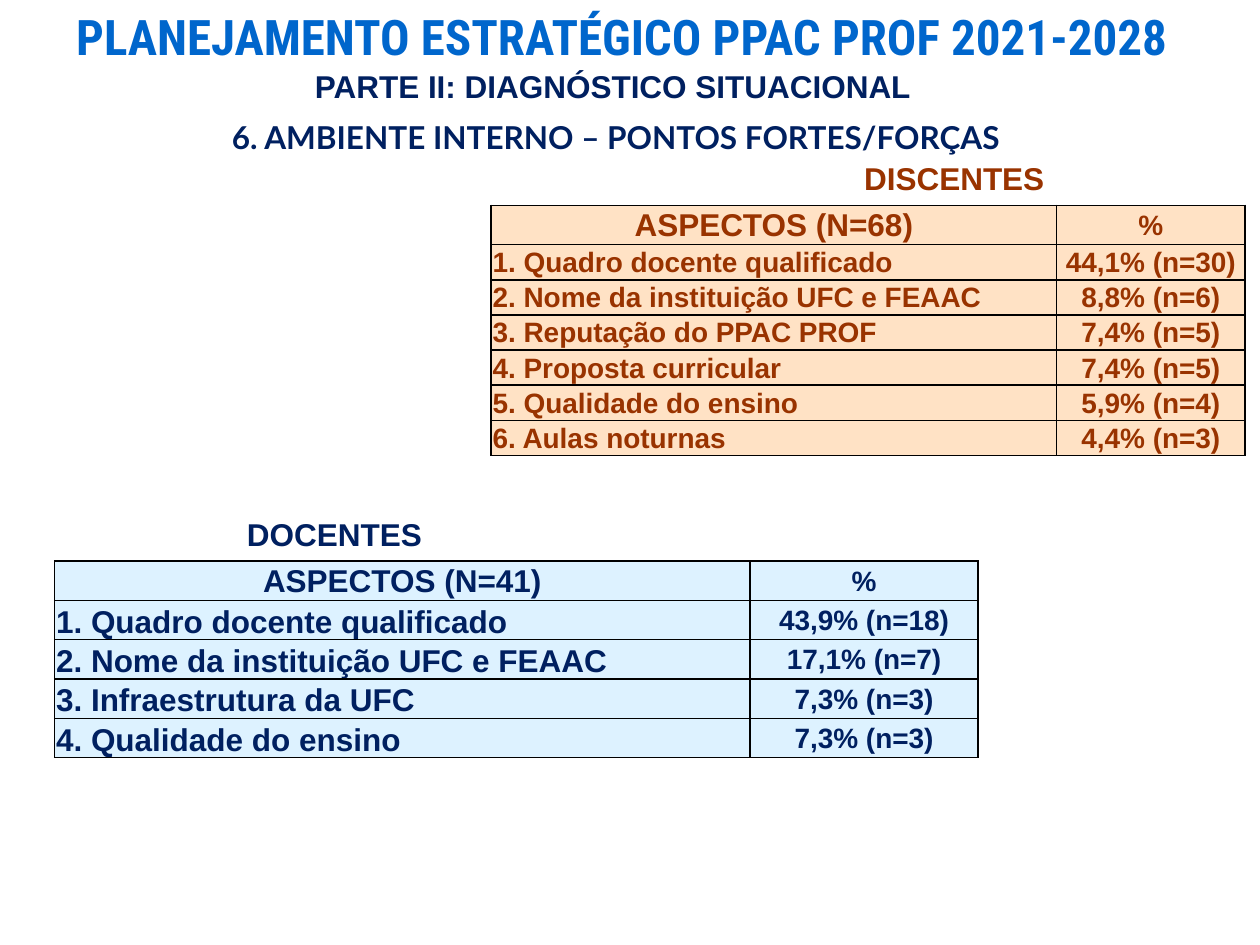
from lxml import etree
from pptx import Presentation
from pptx.dml.color import RGBColor
from pptx.enum.text import MSO_ANCHOR as ANCHOR, MSO_AUTO_SIZE as AUTO, PP_ALIGN as ALIGN
from pptx.oxml.ns import qn
from pptx.util import Cm, Pt

COLORS = {
    "title": "0066CC", "glow": "99CCFF", "navy": "002060", "brown": "993300",
    "peach": "FFE2C5", "sky": "DDF2FF", "border": "000000",
}

STUDENTS = [
    ("ASPECTOS (N=68)", "%"),
    ("1. Quadro docente qualificado", "44,1% (n=30)"),
    ("2. Nome da instituição UFC e FEAAC", "8,8% (n=6)"),
    ("3. Reputação do PPAC PROF", "7,4% (n=5)"),
    ("4. Proposta curricular", "7,4% (n=5)"),
    ("5. Qualidade do ensino", "5,9% (n=4)"),
    ("6. Aulas noturnas", "4,4% (n=3)"),
]
TEACHERS = [
    ("ASPECTOS (N=41)", "%"),
    ("1. Quadro docente qualificado", "43,9% (n=18)"),
    ("2. Nome da instituição UFC e FEAAC", "17,1% (n=7)"),
    ("3. Infraestrutura da UFC", "7,3% (n=3)"),
    ("4. Qualidade do ensino", "7,3% (n=3)"),
]


def rgb(name):
    return RGBColor.from_string(COLORS[name])


def write(tf, text, color, size=18, font="Arial", align=ALIGN.LEFT):
    """Fill a text frame with one bold paragraph and return its run."""
    tf.text = text
    p = tf.paragraphs[0]
    p.alignment = align
    r = p.runs[0]
    r.font.name, r.font.size, r.font.bold = font, Pt(size), True
    r.font.color.rgb = rgb(color)
    return r


def add_line(parent, tag, index, width, color):
    """Insert a solid line element (text outline or cell border)."""
    ln = etree.Element(qn(tag), w=str(Pt(width)))
    fill = etree.SubElement(ln, qn("a:solidFill"))
    etree.SubElement(fill, qn("a:srgbClr"), val=COLORS[color])
    parent.insert(index, ln)


def add_title(s, x, y, w, h):
    sp = s.shapes.title
    sp.left, sp.top, sp.width, sp.height = Cm(x), Cm(y), Cm(w), Cm(h)
    tf = sp.text_frame
    tf.word_wrap, tf.auto_size = False, AUTO.NONE
    tf.vertical_anchor = ANCHOR.TOP
    r = write(tf, "PLANEJAMENTO ESTRATÉGICO PPAC PROF 2021-2028",
              "title", 28, "Roboto Condensed", ALIGN.CENTER)
    add_line(r.font._element, "a:ln", 0, 1.5, "glow")


def add_label(s, text, color, x, y, w, wrap=False, **style):
    tf = s.shapes.add_textbox(Cm(x), Cm(y), Cm(w), Cm(1.02)).text_frame
    tf.word_wrap, tf.auto_size = wrap, AUTO.SHAPE_TO_FIT_TEXT
    write(tf, text, color, **style)


def format_cell(cell, text, color, fill, size, align, anchor):
    cell.margin_left = cell.margin_right = cell.margin_top = Cm(0.03)
    cell.margin_bottom = 0
    cell.vertical_anchor = anchor
    cell.fill.solid()
    cell.fill.fore_color.rgb = rgb(fill)
    write(cell.text_frame, text, color, size, align=align)
    for i, side in enumerate("LRTB"):
        add_line(cell._tc.get_or_add_tcPr(), f"a:ln{side}", i, 1, "border")


def add_panel(s, x, y, heading, heading_dx, rows, widths, row_h,
              color, fill, size, anchor):
    """Heading with its table; size and anchor apply to the aspect names."""
    add_label(s, heading, color, x + heading_dx, y, 4.2)
    head_h = 0.79
    height = head_h + row_h * (len(rows) - 1)
    table = s.shapes.add_table(len(rows), 2, Cm(x), Cm(y + 1.05),
                               Cm(sum(widths)), Cm(height)).table
    for col, w in zip(table.columns, widths):
        col.width = Cm(w)
    for i, (aspect, share) in enumerate(rows):
        head = i == 0
        table.rows[i].height = Cm(head_h if head else row_h)
        format_cell(table.cell(i, 0), aspect, color, fill, 18 if head else size,
                    ALIGN.CENTER if head else ALIGN.LEFT,
                    ANCHOR.MIDDLE if head else anchor)
        format_cell(table.cell(i, 1), share, color, fill, 16,
                    ALIGN.CENTER, ANCHOR.MIDDLE)


def main():
    prs = Presentation()
    prs.slide_width, prs.slide_height = Cm(25.4), Cm(19.05)
    s = prs.slides.add_slide(prs.slide_layouts[5])
    add_title(s, 0.78, 0, 23.5, 1.19)
    add_label(s, "PARTE II: DIAGNÓSTICO SITUACIONAL", "navy", 6.1, 1.22, 12.65)
    add_label(s, "6. AMBIENTE INTERNO – PONTOS FORTES/FORÇAS", "navy",
              4.12, 2.26, 16.59, wrap=True, font="Lato", align=ALIGN.CENTER)
    add_panel(s, 9.9, 3.09, "DISCENTES", 7.27, STUDENTS, (11.4, 3.8), 0.7,
              "brown", "peach", 16, ANCHOR.MIDDLE)
    add_panel(s, 1.1, 10.26, "DOCENTES", 3.63, TEACHERS, (14.02, 4.6), 0.79,
              "navy", "sky", 18, ANCHOR.BOTTOM)
    prs.save("out.pptx")


if __name__ == "__main__":
    main()
